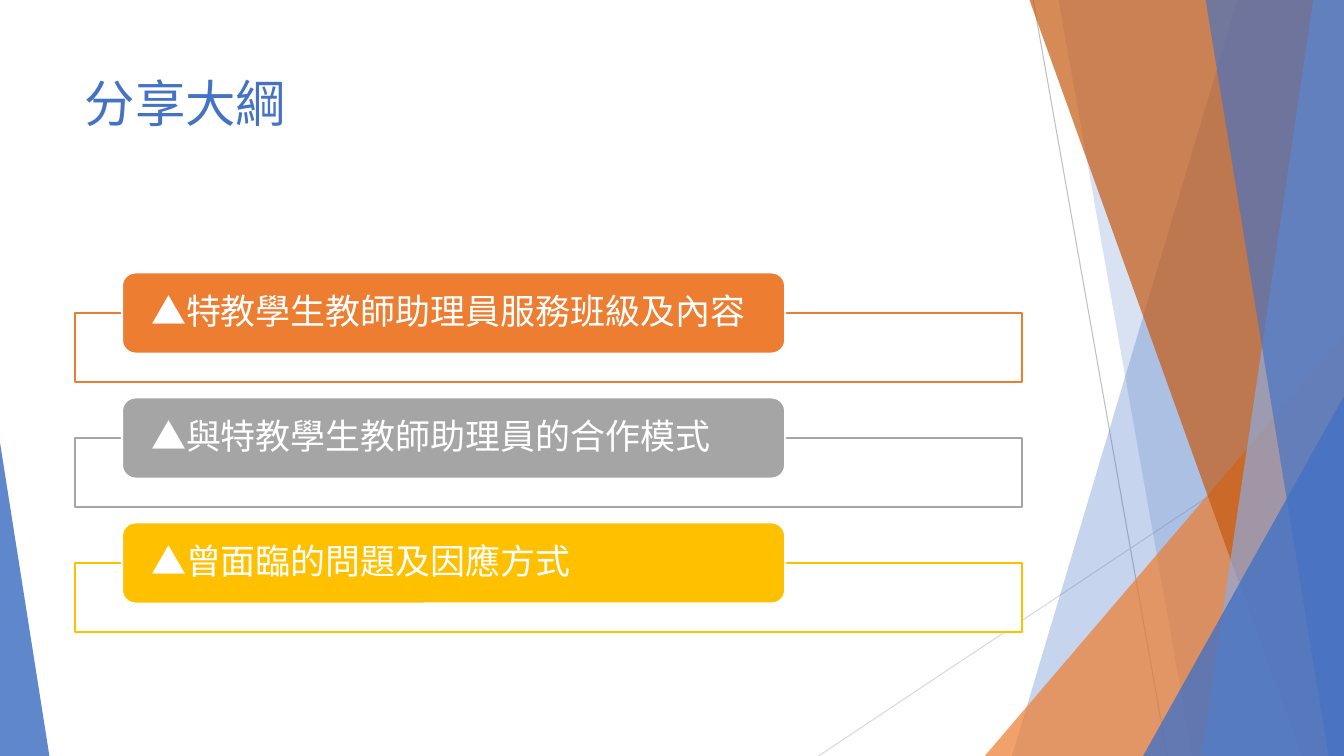
"""Builds the outline slide: three topic bars beside a band of coloured facets."""
import pptx
import pptx.dml.color
import pptx.enum.shapes
import pptx.enum.text
import pptx.oxml
import pptx.oxml.ns
import pptx.util

Pt = pptx.util.Pt
SHAPES = pptx.enum.shapes.MSO_SHAPE
ANCHOR = pptx.enum.text.MSO_ANCHOR
WIDTH, HEIGHT = 960, 540
BLUE, ORANGE, WHITE = "4472C4", "ED7D31", "FFFFFF"


def paint(fill, colour, opacity=100):
    fill.solid()
    fill.fore_color.rgb = pptx.dml.color.RGBColor.from_string(colour)
    if opacity < 100:
        for tint in fill._xPr.iter(pptx.oxml.ns.qn("a:srgbClr")):
            alpha = tint.makeelement(pptx.oxml.ns.qn("a:alpha"), {"val": str(opacity * 1000)})
            tint.append(alpha)


def write(box, text, size, colour, frame_format, para_format):
    frame = box.text_frame
    for name, value in frame_format.items():
        setattr(frame, name, value)
    para = frame.paragraphs[0]
    for name, value in para_format.items():
        setattr(para, name, value)
    span = para.add_run()
    span.text = text
    span.font.name = "Karla"
    span.font.size = Pt(size)
    paint(span.font.fill, colour)


deck = pptx.Presentation()
deck.slide_width, deck.slide_height = Pt(WIDTH), Pt(HEIGHT)
page = deck.slides.add_slide(deck.slide_layouts[5])

rays = [
    ("BFBFBF", 738, 0, 833.76, HEIGHT),
    ("D9D9D9", WIDTH, 290.16, 584.64, HEIGHT),
]
for colour, *ends in rays:
    ray = page.shapes.add_connector(
        pptx.enum.shapes.MSO_CONNECTOR.STRAIGHT, *[Pt(end) for end in ends])
    ray.line.width = Pt(0.75)
    paint(ray.line.fill, colour)
    pptx.oxml.ns.qn("a:effectLst")
    properties = ray.line._ln.getparent()
    properties.append(properties.makeelement(pptx.oxml.ns.qn("a:effectLst"), {}))

# colour, opacity, then band (top x, bottom x) or triangle (left, top, width, apex)
facets = [
    (BLUE, 30, (884.16, 722.88)),
    (BLUE, 20, (756, 851.76)),
    (ORANGE, 72, (703.44, 239.76, 256.56, 1)),
    ("C55A11", 70, (735.12, 929.52)),
    ("8FAADC", 70, (938.16, 858.24)),
    (BLUE, 65, (861.12, 948.96)),
    (BLUE, 80, (816.48, 282.96, 143.52, 1)),
    (BLUE, 85, (0, 316.08, 35.28, 0)),
]
for colour, opacity, outline in facets:
    if len(outline) == 2:
        top_x, bottom_x = outline
        builder = page.shapes.build_freeform(Pt(top_x), Pt(-0.72))
        corners = [(WIDTH, -0.72), (WIDTH, HEIGHT), (bottom_x, HEIGHT)]
        builder.add_line_segments([(Pt(x), Pt(y)) for x, y in corners], close=True)
        facet = builder.convert_to_shape()
    else:
        left, top, width, apex = outline
        facet = page.shapes.add_shape(
            SHAPES.ISOSCELES_TRIANGLE, Pt(left), Pt(top), Pt(width), Pt(HEIGHT - top))
        facet.adjustments[0] = apex
    facet.shadow.inherit = False
    facet.line.fill.background()
    paint(facet.fill, colour, opacity)

title = page.shapes.title
title_place = {"left": 53.28, "top": 48.24, "width": 676.8, "height": 103.68}
for name, value in title_place.items():
    setattr(title, name, Pt(value))
left_aligned = {"alignment": pptx.enum.text.PP_ALIGN.LEFT}
title_frame = {
    "vertical_anchor": ANCHOR.TOP,
    "auto_size": pptx.enum.text.MSO_AUTO_SIZE.NONE,
    "word_wrap": True,
}
write(title, "分享大綱", 36, BLUE, title_frame, left_aligned)

topics = [
    ("▲特教學生教師助理員服務班級及內容", ORANGE),
    ("▲與特教學生教師助理員的合作模式", "A5A5A5"),
    ("▲曾面臨的問題及因應方式", "FFC000"),
]
topic_frame = {
    "vertical_anchor": ANCHOR.MIDDLE,
    "word_wrap": True,
    "margin_left": Pt(18),
    "margin_right": Pt(18),
    "margin_top": 0,
    "margin_bottom": 0,
}
topic_para = {**left_aligned, "line_spacing": 0.9}
for row, (topic, colour) in enumerate(topics):
    top = 194.6 + row * 89.28
    panel = page.shapes.add_shape(
        SHAPES.RECTANGLE, Pt(53.28), Pt(top + 28.8), Pt(676.8), Pt(49.68))
    label = page.shapes.add_shape(
        SHAPES.ROUNDED_RECTANGLE, Pt(87.12), Pt(top), Pt(473.76), Pt(58.0))
    for box, inside, opacity, edge in [(panel, WHITE, 90, colour), (label, colour, 100, WHITE)]:
        box.shadow.inherit = False
        box.line.width = Pt(1.5)
        paint(box.fill, inside, opacity)
        paint(box.line.fill, edge)
    write(label, topic, 25, WHITE, topic_frame, topic_para)

deck.save("out.pptx")
